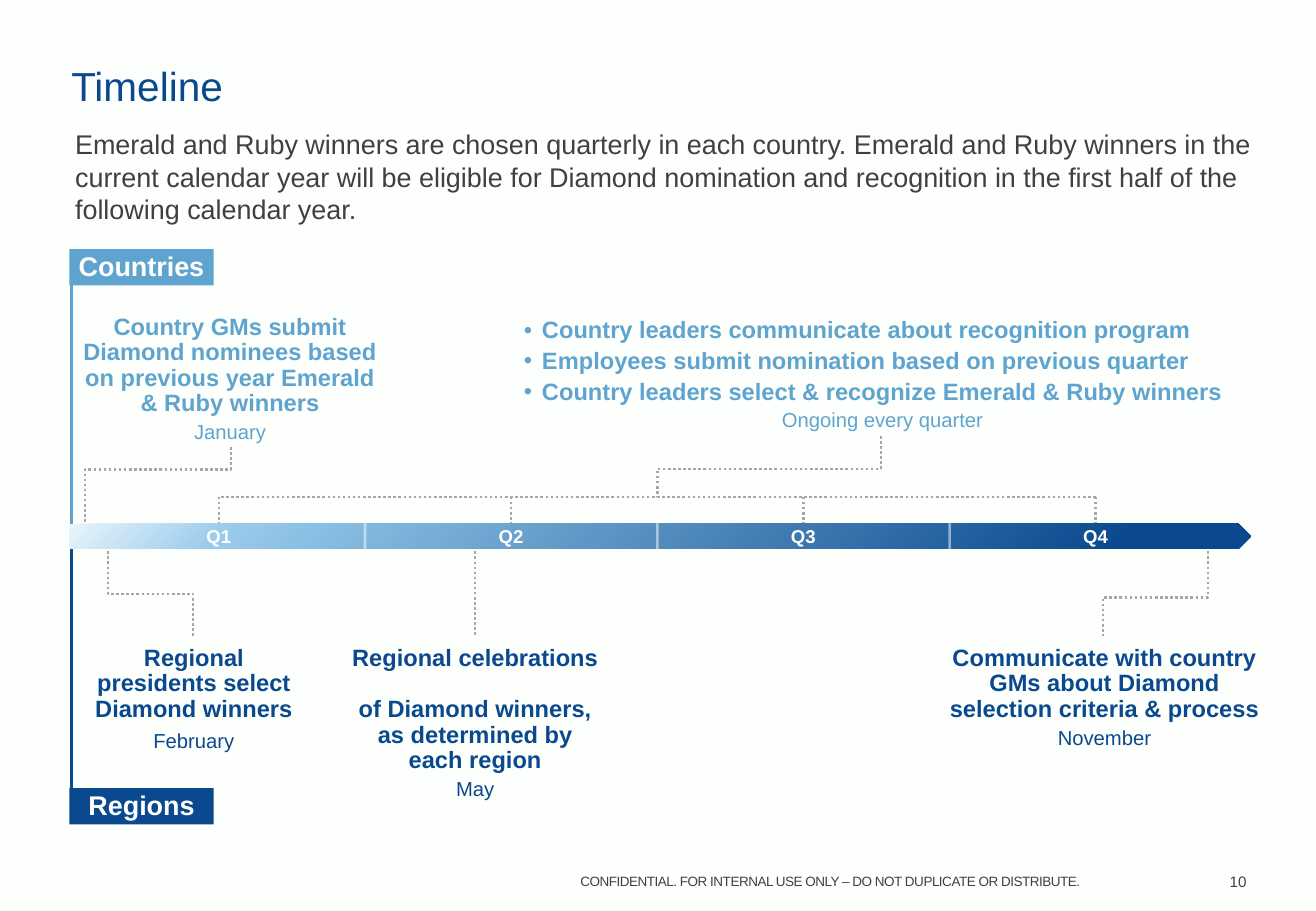
from copy import deepcopy

from lxml import etree
from pptx import Presentation
from pptx.dml.color import RGBColor
from pptx.enum import dml, shapes, text
from pptx.oxml.ns import nsdecls, qn
from pptx.oxml import parse_xml
from pptx.util import Cm, Pt

SKY, NAVY, GREY, DOTS, WHITE = "5FA4CE", "0A498E", "3F403F", "A6A6A6", "FFFFFF"
LEFT, CENTER, RIGHT = text.PP_ALIGN.LEFT, text.PP_ALIGN.CENTER, text.PP_ALIGN.RIGHT
TOP, MIDDLE, BOTTOM = text.MSO_ANCHOR.TOP, text.MSO_ANCHOR.MIDDLE, text.MSO_ANCHOR.BOTTOM


def rgb(color):
    return RGBColor.from_string(color)


def set_all(target, values):
    for name, value in values.items():
        setattr(target, name, value)


def place(shape, box):
    set_all(shape, dict(zip(("left", "top", "width", "height"), map(Cm, box))))


def set_frame(shape, inset=(0, 0), anchor=TOP):
    """Set the margins (horizontal, vertical) in cm and the anchor of a shape's text."""
    across, down = map(Cm, inset)
    set_all(shape.text_frame, {
        "word_wrap": True, "auto_size": text.MSO_AUTO_SIZE.NONE, "vertical_anchor": anchor,
        "margin_left": across, "margin_right": across,
        "margin_top": down, "margin_bottom": down})


def write(shape, lines):
    """Write one paragraph per (text, size, color, options) entry."""
    frame = shape.text_frame
    for index, (words, size, color, options) in enumerate(lines):
        paragraph = frame.add_paragraph() if index else frame.paragraphs[0]
        paragraph.text = words
        properties = paragraph._p.get_or_add_pPr()
        properties.set("marL", str(Cm(options.get("margin", 0))))
        properties.set("indent", str(Cm(options.get("indent", 0))))
        if "bullet" in options:
            etree.SubElement(properties, qn("a:buChar")).set("char", options["bullet"])
        else:
            etree.SubElement(properties, qn("a:buNone"))
        set_all(paragraph, {
            "alignment": options.get("align", CENTER),
            "line_spacing": options.get("spacing", 0.9),
            "space_before": Pt(options.get("before", 0)),
            "space_after": Pt(options.get("after", 0))})
        for run in paragraph.runs:
            set_all(run.font, {"name": "Arial", "size": Pt(size),
                               "bold": options.get("bold", False)})
            run.font.color.rgb = rgb(color)
            if "tracking" in options:
                run._r.get_or_add_rPr().set("spc", str(options["tracking"]))
        for line_break in paragraph._p.findall(qn("a:br")):
            line_break.insert(0, deepcopy(paragraph.runs[0]._r.rPr))


def add_text(slide, box, lines, inset=(0, 0), anchor=TOP):
    shape = slide.shapes.add_textbox(*map(Cm, box))
    set_frame(shape, inset, anchor)
    write(shape, lines)


def add_line(slide, start, end, color=DOTS, dotted=True, opacity=100, bend=None):
    """Draw a line; a bend turns it sideways at that share of its height."""
    kind = shapes.MSO_CONNECTOR.STRAIGHT if bend is None else shapes.MSO_CONNECTOR.ELBOW
    line = slide.shapes.add_connector(kind, *map(Cm, start + end))
    line.line.color.rgb = rgb(color)
    line.line.width = Pt(1.5)
    if dotted:
        line.line.dash_style = dml.MSO_LINE.ROUND_DOT
    properties = line._element.spPr
    etree.SubElement(properties, qn("a:effectLst"))
    if opacity < 100:
        fill = properties.find(".//" + qn("a:srgbClr"))
        etree.SubElement(fill, qn("a:alpha")).set("val", str(opacity * 1000))
    if bend is not None:
        (x1, y1), (x2, y2) = start, end
        width, height = y2 - y1, abs(x2 - x1)
        place(line, ((x1 + x2 - width) / 2, (y1 + y2 - height) / 2, width, height))
        frame = properties.find(qn("a:xfrm"))
        frame.attrib.clear()
        frame.set("rot", str((90 if x2 < x1 else 270) * 60000))
        if x2 > x1:
            frame.set("flipH", "1")
        geometry = properties.find(qn("a:prstGeom"))
        guides = geometry.find(qn("a:avLst"))
        if guides is None:
            guides = etree.SubElement(geometry, qn("a:avLst"))
        guide = etree.SubElement(guides, qn("a:gd"))
        guide.set("name", "adj1")
        guide.set("fmla", f"val {round(bend * 100000)}")


def add_block(slide, kind, box):
    block = slide.shapes.add_shape(kind, *map(Cm, box))
    block.shadow.inherit = False
    block.line.fill.background()
    return block


def add_tag(slide, left, top, words, color):
    tag = add_block(slide, shapes.MSO_SHAPE.RECTANGLE, (left, top, 3.02, 0.76))
    tag.fill.solid()
    tag.fill.fore_color.rgb = rgb(color)
    set_frame(tag, (0, 0.08))
    write(tag, [(words, 16, WHITE, {"bold": True, "after": 3})])


def add_event(slide, box, words, month, color, before=0):
    add_text(slide, box, [(words, 14, color, {"bold": True, "after": 3}),
                          (month, 12, color, {"before": before})])


def add_heading(slide, box):
    left, top, width, height = box
    title, intro = slide.shapes.title, slide.placeholders[1]
    place(title, (left, top, width, 1.17))
    set_frame(title, (0.25, 0.13), BOTTOM)
    write(title, [("Timeline", 24, NAVY, {"align": LEFT})])
    place(intro, (left - 0.25, top + 1.27, width + 0.51, height - 1.27))
    set_frame(intro, (0.25, 0.13))
    write(intro, [(
        "Emerald and Ruby winners are chosen quarterly in each country. Emerald and Ruby "
        "winners in the current calendar year will be eligible for Diamond nomination and "
        "recognition in the first half of the following calendar year.",
        16, GREY, {"align": LEFT, "margin": 0.33, "spacing": 1.0})])


def add_countries(slide, box):
    left, top, width, height = box
    bottom = top + height
    add_tag(slide, left, top, "Countries", SKY)
    add_line(slide, (left + 0.05, top + 0.76), (left + 0.05, bottom + 0.2), SKY, dotted=False)
    add_event(slide, (left + 0.2, top + 1.37, 6.32, 2.72),
              "Country GMs submit Diamond nominees based on previous year Emerald & Ruby winners",
              "January", SKY)
    tasks = slide.placeholders[2]
    place(tasks, (left + 9.42, top + 1.37, 15.16, 2.64))
    set_frame(tasks, (0.08, 0.08))
    bullet = {"align": LEFT, "bold": True, "after": 3,
              "bullet": "•", "margin": 0.38, "indent": -0.38}
    write(tasks, [(words, 14, SKY, bullet) for words in (
        "Country leaders communicate about recognition program",
        "Employees submit nomination based on previous quarter",
        "Country leaders select & recognize Emerald & Ruby winners",
    )] + [("Ongoing every quarter", 12, SKY, {})])
    add_line(slide, (left + 3.38, top + 4.14), (left + 0.33, bottom), bend=0.29)
    add_line(slide, (left + 16.97, top + 3.91), (left + 12.29, bottom - 0.56), bend=0.54)


def add_regions(slide, box):
    left, top, width, height = box
    bottom = top + height
    add_tag(slide, left, bottom - 0.76, "Regions", NAVY)
    add_line(slide, (left + 0.05, top - 0.23), (left + 0.05, bottom - 0.76), NAVY, dotted=False)
    for start, end, bend in ((0.81, 2.59, 0.5), (8.48, 8.48, None), (23.8, 21.61, 0.54)):
        add_line(slide, (left + start, top + 0.05), (left + end, top + 1.83), bend=bend)
    for offset, span, words, month, before in (
        (0.38, 4.45, "Regional presidents select Diamond winners", "February", 2),
        (5.87, 5.23, "Regional celebrations \vof Diamond winners, as determined by each region",
         "May", 0),
        (18.34, 6.6, "Communicate with country GMs about Diamond selection criteria & process",
         "November", 0),
    ):
        add_event(slide, (left + offset, top + 2.03, span, 2.72), words, month, NAVY, before)


def add_quarters(slide, box):
    left, top, width, height = box
    arrow = add_block(slide, shapes.MSO_SHAPE.PENTAGON, box)
    arrow.fill.gradient()
    stops = "".join(f'<a:gs pos="{share * 1000}"><a:srgbClr val="{color}"/></a:gs>'
                    for share, color in ((11, NAVY), (86, "97CAEB"), (100, "EAF4FB")))
    gradient = arrow._element.spPr.find(qn("a:gradFill"))
    gradient.getparent().replace(gradient, parse_xml(
        f'<a:gradFill {nsdecls("a")} rotWithShape="1"><a:gsLst>{stops}</a:gsLst>'
        '<a:path path="circle"><a:fillToRect l="100000" t="100000"/></a:path></a:gradFill>'))
    quarter, rail = 6.11, top - 0.56
    first = left + 0.07
    centers = [first + quarter * (index + 0.5) for index in range(4)]
    for index, center in enumerate(centers):
        start = first + quarter * index
        add_text(slide, (start, top + 0.02, quarter, 0.48),
                 [(f"Q{index + 1}", 11, WHITE, {"bold": True, "spacing": 1.0})])
        if index:
            add_line(slide, (start, top - 0.08), (start, top + height + 0.03),
                     WHITE, dotted=False, opacity=50)
        add_line(slide, (center, rail), (center, top - 0.03))
    add_line(slide, (centers[-1], rail), (centers[0], rail))


def add_footer(slide, box):
    left, top, width, height = box
    add_text(slide, (left, top, 11.94, height), [(
        "CONFIDENTIAL. FOR INTERNAL USE ONLY – DO NOT DUPLICATE OR DISTRIBUTE.",
        8, GREY, {"align": RIGHT, "spacing": 1.0, "tracking": -30})], (0.25, 0.13))
    add_text(slide, (left + width - 1.24, top, 1.24, height),
             [("10", 9, GREY, {"align": RIGHT, "spacing": 1.0})], (0.25, 0.13), MIDDLE)


def main():
    presentation = Presentation()
    presentation.slide_width, presentation.slide_height = Cm(27.51), Cm(19.05)
    slide = presentation.slides.add_slide(presentation.slide_layouts[3])
    slide.background.fill.solid()
    slide.background.fill.fore_color.rgb = rgb("FDFFFD")
    add_heading(slide, (1.24, 1.27, 25.07, 3.6))
    add_countries(slide, (1.45, 5.21, 24.7, 5.74))
    add_regions(slide, (1.45, 11.48, 24.7, 5.76))
    add_quarters(slide, (1.45, 10.95, 24.7, 0.53))
    add_footer(slide, (10.9, 18.13, 15.41, 0.62))
    presentation.save("out.pptx")


if __name__ == "__main__":
    main()
